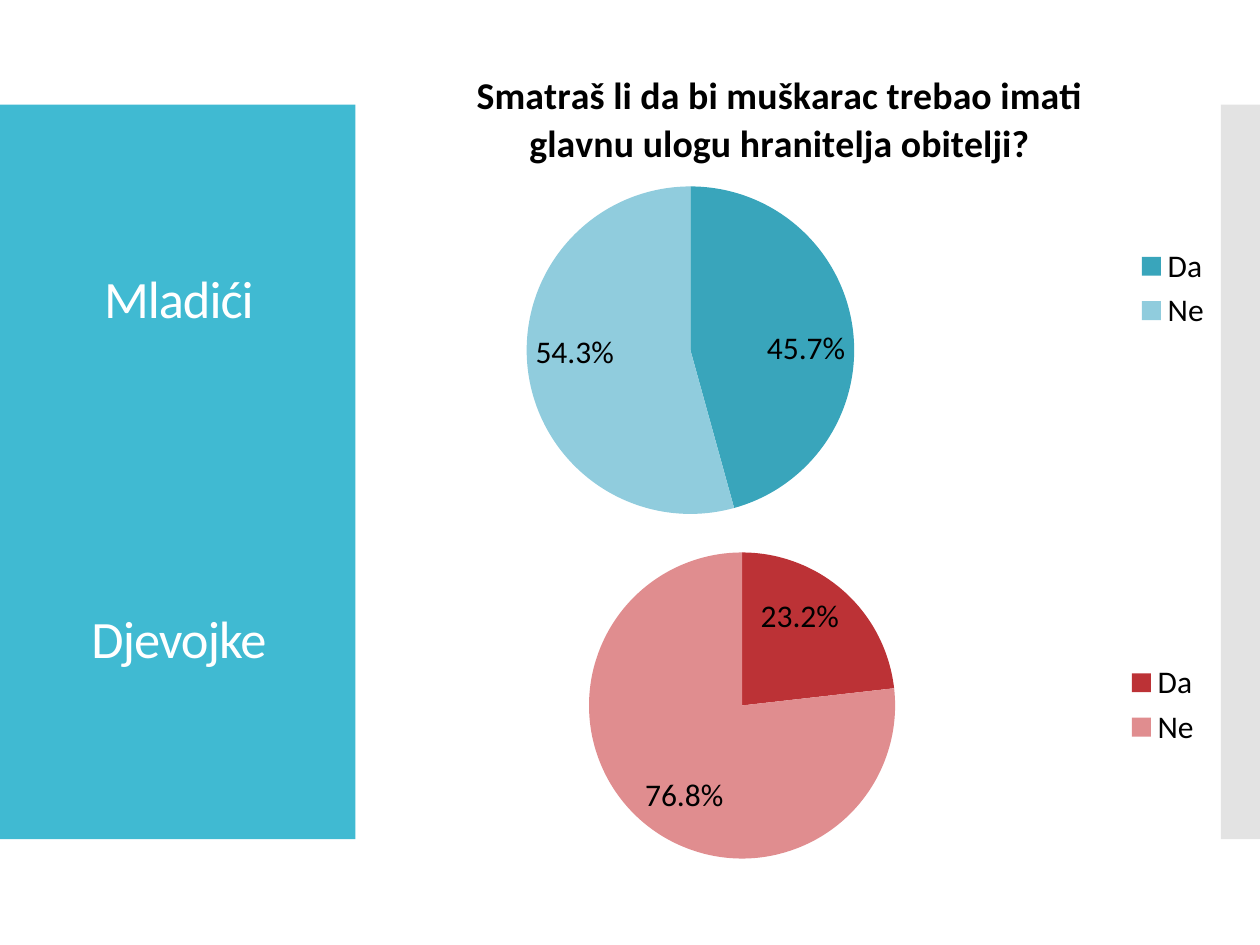
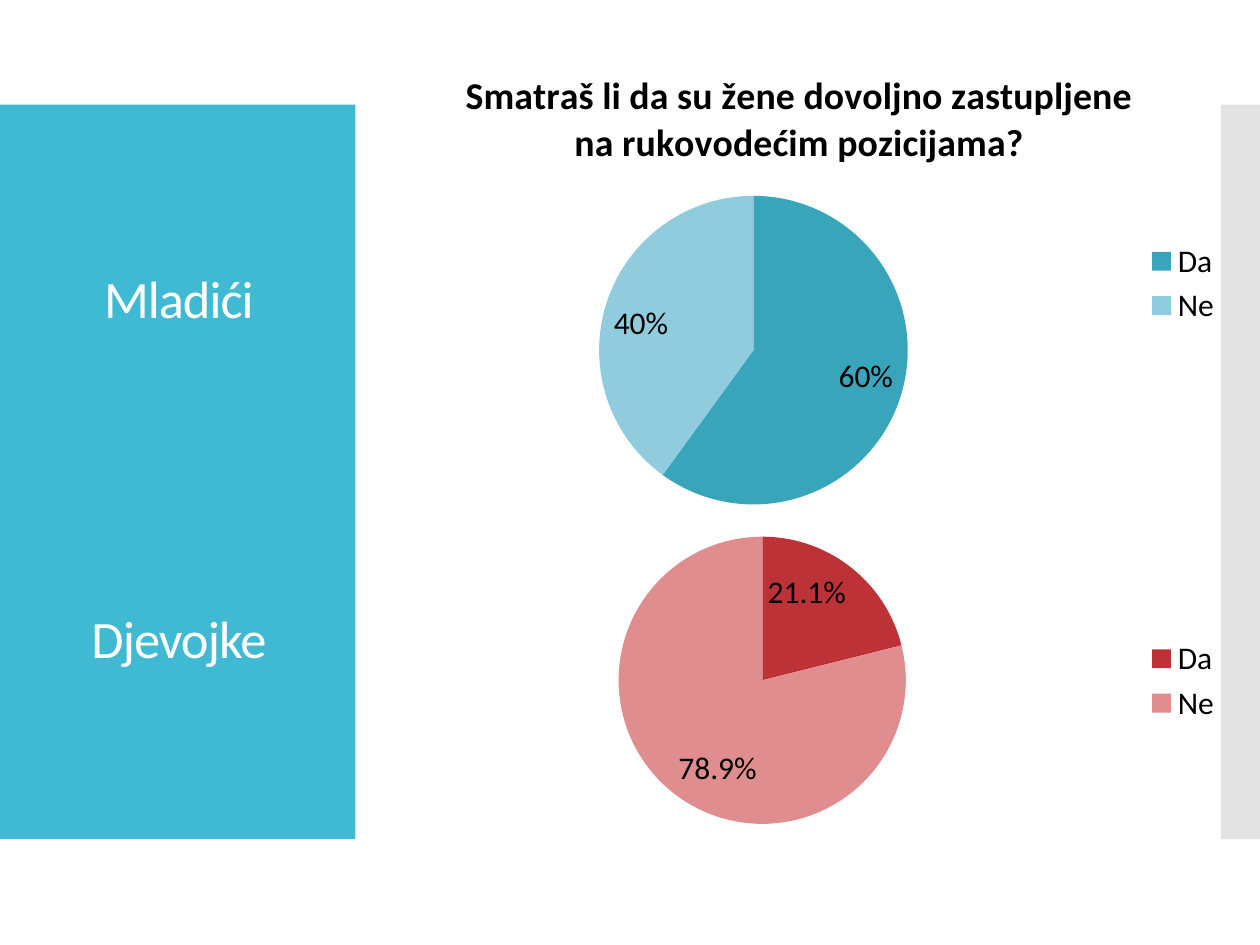
import dataclasses

import pptx
import pptx.chart.data
import pptx.dml.color
import pptx.enum.chart
import pptx.enum.shapes
import pptx.enum.text
import pptx.oxml
import pptx.oxml.ns
import pptx.util
from pptx.util import Inches


@dataclasses.dataclass(frozen=True)
class Theme:
    font: str = "Calibri"
    group_size: float = 30
    question_size: float = 21.6
    chart_size: float = 18
    side_panel: str = "40BAD2"
    edge_panel: str = "C8C8C8"
    edge_opacity: int = 50
    light: str = "FFFFFF"
    dark: str = "000000"
    boys: tuple = ("39A5BB", "90CCDD")
    girls: tuple = ("BC3236", "E08D8F")


@dataclasses.dataclass(frozen=True)
class Pie:
    """Answers of one group, with the chart frame and the circle in inches."""
    shares: tuple
    frame: tuple
    center: tuple
    diameter: float
    number_format: str = "0.0%"


THEME = Theme()
ANSWERS = ("Da", "Ne")
GROUP_LABELS = (("Mladići", 2.39), ("Djevojke", 5.09))
SURVEY = (
    ("Smatraš li da bi muškarac trebao imati glavnu ulogu hranitelja obitelji?",
     Pie((0.457, 0.543), (2.66, 0.36, 7.06, 3.86), (5.48, 2.78), 2.6),
     Pie((0.232, 0.768), (2.87, 4.06, 6.77, 3.07), (5.89, 5.6), 2.43)),
    ("Smatraš li da su žene dovoljno zastupljene na rukovodećim pozicijama?",
     Pie((0.6, 0.4), (2.89, 0.36, 6.91, 3.78), (5.98, 2.78), 2.45, "0%"),
     Pie((0.211, 0.789), (3.03, 3.91, 6.77, 2.99), (6.05, 5.4), 2.28)),
)


def rgb(color):
    return pptx.dml.color.RGBColor.from_string(color)


def style_font(font, size, color, bold=False):
    font.name = THEME.font
    font.size = pptx.util.Pt(size)
    font.bold = bold
    font.color.rgb = rgb(color)


def add_panel(slide, left, width, color, opacity=100):
    panel = slide.shapes.add_shape(
        pptx.enum.shapes.MSO_SHAPE.RECTANGLE,
        Inches(left), Inches(0.83), Inches(width), Inches(5.83))
    panel.shadow.inherit = False
    panel.line.fill.background()
    panel.fill.solid()
    panel.fill.fore_color.rgb = rgb(color)
    if opacity < 100:
        color_element = panel.fill._xPr.find(".//" + pptx.oxml.ns.qn("a:srgbClr"))
        alpha = pptx.oxml.parse_xml(
            f'<a:alpha {pptx.oxml.ns.nsdecls("a")} val="{opacity * 1000}"/>')
        color_element.append(alpha)


def add_group_label(slide, text, center_y):
    height = 0.6
    box = slide.shapes.add_textbox(
        Inches(0.21), Inches(center_y - height / 2), Inches(2.42), Inches(height))
    frame = box.text_frame
    frame.word_wrap = True
    frame.vertical_anchor = pptx.enum.text.MSO_ANCHOR.MIDDLE
    paragraph = frame.paragraphs[0]
    paragraph.alignment = pptx.enum.text.PP_ALIGN.CENTER
    paragraph.line_spacing = 0.9
    run = paragraph.add_run()
    run.text = text
    style_font(paragraph.font, THEME.group_size, THEME.light)
    run.font._element.set("spc", "-60")


def place_circle(chart, pie):
    """Fix the plot area as a square around the circle."""
    left, top, width, height = pie.frame
    radius = pie.diameter / 2
    fractions = {
        "x": (pie.center[0] - radius - left) / width,
        "y": (pie.center[1] - radius - top) / height,
        "w": pie.diameter / width,
        "h": pie.diameter / height,
    }
    values = "".join(f'<c:{name} val="{value:.4f}"/>' for name, value in fractions.items())
    layout = pptx.oxml.parse_xml(
        f'<c:layout {pptx.oxml.ns.nsdecls("c")}><c:manualLayout>'
        '<c:layoutTarget val="inner"/><c:xMode val="edge"/><c:yMode val="edge"/>'
        f'{values}</c:manualLayout></c:layout>')
    plot_area = chart._chartSpace.chart.plotArea
    for previous in plot_area.findall(pptx.oxml.ns.qn("c:layout")):
        plot_area.remove(previous)
    plot_area.insert(0, layout)


def add_pie(slide, pie, colors, question=None):
    data = pptx.chart.data.CategoryChartData(number_format=pie.number_format)
    data.categories = ANSWERS
    data.add_series(question or "Djevojke", pie.shares)
    chart = slide.shapes.add_chart(
        pptx.enum.chart.XL_CHART_TYPE.PIE, *map(Inches, pie.frame), data).chart
    style_font(chart.font, THEME.chart_size, THEME.dark)

    chart.has_title = question is not None
    if question:
        chart.chart_title.include_in_layout = False
        title = chart.chart_title.text_frame
        title.text = question
        style_font(title.paragraphs[0].font, THEME.question_size, THEME.dark, bold=True)

    chart.has_legend = True
    chart.legend.position = pptx.enum.chart.XL_LEGEND_POSITION.RIGHT
    chart.legend.include_in_layout = False

    plot = chart.plots[0]
    plot.vary_by_categories = True
    for index, color in enumerate(colors):
        fill = plot.series[0].points[index].format.fill
        fill.solid()
        fill.fore_color.rgb = rgb(color)
    plot.has_data_labels = True
    labels = plot.data_labels
    labels.show_value = True
    labels.show_percentage = False
    labels.number_format = pie.number_format
    labels.number_format_is_linked = False
    labels.position = pptx.enum.chart.XL_LABEL_POSITION.INSIDE_END
    style_font(labels.font, THEME.chart_size, THEME.dark)
    place_circle(chart, pie)


def add_question_slide(presentation, question, boys, girls):
    slide = presentation.slides.add_slide(presentation.slide_layouts[6])
    add_panel(slide, 0, 2.82, THEME.side_panel)
    add_panel(slide, 9.69, 0.31, THEME.edge_panel, THEME.edge_opacity)
    for text, center_y in GROUP_LABELS:
        add_group_label(slide, text, center_y)
    add_pie(slide, boys, THEME.boys, question)
    add_pie(slide, girls, THEME.girls)


def main():
    presentation = pptx.Presentation()
    presentation.slide_width = Inches(10)
    presentation.slide_height = Inches(7.5)
    for question, boys, girls in SURVEY:
        add_question_slide(presentation, question, boys, girls)
    presentation.save("out.pptx")


if __name__ == "__main__":
    main()
